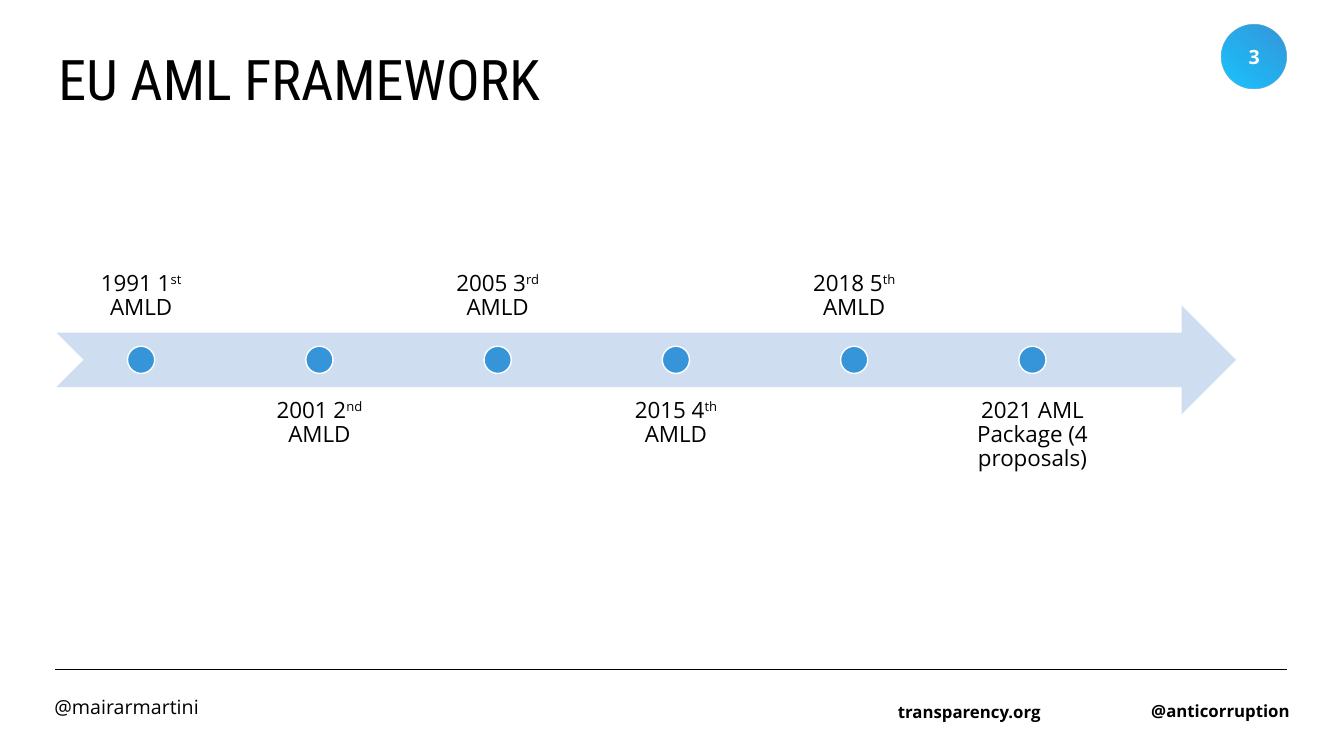
from dataclasses import dataclass
from lxml.etree import SubElement
from pptx import Presentation
from pptx.dml.color import RGBColor
from pptx.enum.shapes import MSO_CONNECTOR, MSO_SHAPE
from pptx.enum.text import MSO_ANCHOR, PP_ALIGN
from pptx.oxml.ns import qn
from pptx.util import Inches, Pt


@dataclass(frozen=True)
class Theme:
    ink: str = "000000"
    white: str = "FFFFFF"
    blue: str = "3695D8"
    cyan: str = "08BFFF"
    band: str = "CEDDF0"
    heading_font: str = "Roboto Condensed"
    body_font: str = "Open Sans"
    title_size: int = 40
    label_size: int = 16
    note_size: int = 14
    link_size: int = 12


@dataclass(frozen=True)
class Box:
    """A rectangle in inches."""
    left: float
    top: float
    width: float
    height: float

    def lengths(self):
        return [Inches(n) for n in (self.left, self.top, self.width, self.height)]


THEME = Theme()
MILESTONES = [
    ("1991 1", "st", " AMLD"),
    ("2001 2", "nd", " AMLD"),
    ("2005 3", "rd", " AMLD"),
    ("2015 4", "th", " AMLD"),
    ("2018 5", "th", " AMLD"),
    ("2021 AML Package (4 proposals)",),
]


def write_text(shape, *parts, size=THEME.note_size, font=THEME.body_font,
               color=THEME.ink, bold=False, align=PP_ALIGN.LEFT,
               anchor=MSO_ANCHOR.TOP, spacing=1.0, side=0.1, edge=0.05):
    """Fill a shape with one paragraph; the second part is superscript."""
    frame = shape.text_frame
    frame.word_wrap = True
    frame.vertical_anchor = anchor
    frame.margin_left = frame.margin_right = Inches(side)
    frame.margin_top = frame.margin_bottom = Inches(edge)
    para = frame.paragraphs[0]
    para.alignment = align
    para.line_spacing = spacing
    for index, part in enumerate(parts):
        span = para.add_run()
        span.text = part
        span.font.size = Pt(size)
        span.font.name = font
        span.font.bold = bold
        span.font.color.rgb = RGBColor.from_string(color)
        if index == 1:
            span.font._element.set("baseline", "30000")


def add_text(page, box, *parts, **text_format):
    write_text(page.shapes.add_textbox(*box.lengths()), *parts, **text_format)


def add_figure(page, kind, box, fill, outline=None):
    shape = page.shapes.add_shape(kind, *box.lengths())
    shape.shadow.inherit = False
    shape.fill.solid()
    shape.fill.fore_color.rgb = RGBColor.from_string(fill)
    if outline:
        shape.line.color.rgb = RGBColor.from_string(outline)
        shape.line.width = Pt(1)
    else:
        shape.line.fill.background()
    return shape


def add_title(page, box):
    title = page.shapes.title
    title.left, title.top, title.width, title.height = box.lengths()
    write_text(title, "EU AML FRAMEWORK", size=THEME.title_size,
               font=THEME.heading_font, spacing=0.9)


def add_page_badge(page, box):
    badge = add_figure(page, MSO_SHAPE.OVAL, box, THEME.blue)
    badge.fill.gradient()
    badge.fill.gradient_angle = 230
    for stop, color, position in zip(badge.fill.gradient_stops,
                                     (THEME.blue, THEME.cyan), (0.01, 1)):
        stop.color.rgb = RGBColor.from_string(color)
        stop.position = position
    end_color = list(badge.fill._xPr.iter(qn("a:srgbClr")))[-1]
    SubElement(end_color, qn("a:alpha"), val="92000")
    write_text(badge, "3", color=THEME.white, bold=True, align=PP_ALIGN.CENTER,
               anchor=MSO_ANCHOR.MIDDLE, side=0, edge=0)


def add_timeline(page, box):
    """Draw the arrow, with labels alternating above and below it."""
    add_figure(page, MSO_SHAPE.NOTCHED_RIGHT_ARROW, box, THEME.band)
    label_width, dot, span_width = 1.68, 0.27, 10.52
    step = (span_width - label_width) / (len(MILESTONES) - 1)
    for index, parts in enumerate(MILESTONES):
        left = box.left + index * step
        above = index % 2 == 0
        label_top = box.top + (-0.81 if above else 0.81)
        add_text(page, Box(left, label_top, label_width, box.height), *parts,
                 size=THEME.label_size, align=PP_ALIGN.CENTER, spacing=0.9,
                 anchor=MSO_ANCHOR.BOTTOM if above else MSO_ANCHOR.TOP,
                 side=0.15, edge=0.12)
        add_figure(page, MSO_SHAPE.OVAL,
                   Box(left + (label_width - dot) / 2,
                       box.top + (box.height - dot) / 2, dot, dot),
                   THEME.blue, THEME.white)


def add_footer(page, box):
    right = box.left + box.width
    rule = page.shapes.add_connector(
        MSO_CONNECTOR.STRAIGHT, Inches(box.left), Inches(box.top),
        Inches(right), Inches(box.top))
    rule.line.color.rgb = RGBColor.from_string(THEME.ink)
    rule.line.width = Pt(0.5)
    SubElement(rule._element.spPr, qn("a:effectLst"))
    add_text(page, Box(box.left - 0.11, box.top + 0.25, 3.79, 0.3),
             "@mairarmartini", spacing=0.8)
    for text, left, drop in (("transparency.org", right - 3.99, 0.22),
                             ("@anticorruption", right - 1.52, 0.21)):
        add_text(page, Box(left, box.top + drop, 1.65, 0.4), text,
                 size=THEME.link_size, bold=True, align=PP_ALIGN.RIGHT,
                 anchor=MSO_ANCHOR.MIDDLE)


def main():
    deck = Presentation()
    deck.slide_width, deck.slide_height = Inches(13.33), Inches(7.5)
    page = deck.slides.add_slide(deck.slide_layouts[5])
    add_title(page, Box(0.48, 0.47, 11.78, 1.45))
    add_page_badge(page, Box(12.12, 0.24, 0.64, 0.64))
    add_timeline(page, Box(0.56, 3.03, 11.7, 1.08))
    add_footer(page, Box(0.55, 6.64, 12.21, 0.61))
    deck.save("out.pptx")


if __name__ == "__main__":
    main()
